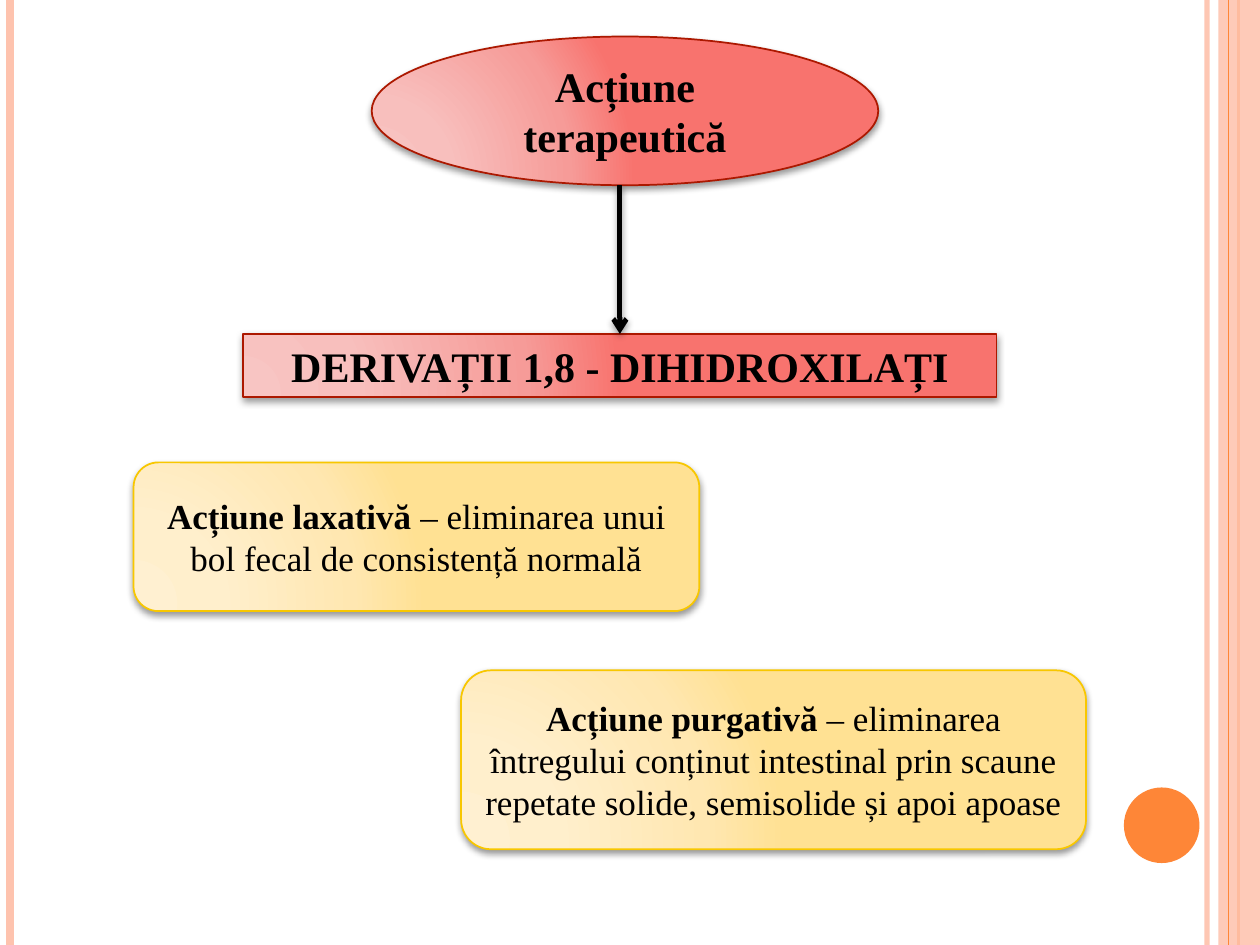
from lxml import etree
from pptx import Presentation
from pptx.dml.color import RGBColor
from pptx.enum.shapes import MSO_CONNECTOR, MSO_SHAPE
from pptx.enum.text import MSO_ANCHOR, MSO_AUTO_SIZE, PP_ALIGN
from pptx.oxml.ns import qn
from pptx.util import Inches, Pt

STRAIGHT = MSO_CONNECTOR.STRAIGHT
RECTANGLE, OVAL = MSO_SHAPE.RECTANGLE, MSO_SHAPE.OVAL
ROUNDED = MSO_SHAPE.ROUNDED_RECTANGLE
TOP, MIDDLE = MSO_ANCHOR.TOP, MSO_ANCHOR.MIDDLE
CENTER = PP_ALIGN.CENTER

WIDTH, HEIGHT = 10, 7.5
FONT = "Times New Roman"
COLORS = {"stripe": "FEC3AE", "accent": "FE8637", "text": "000000",
          "red_line": "AC1800", "yellow_line": "F8C700"}
GRADIENTS = {
    "red": ("F8C5C3", "F8BFBD", "F69B98", "F8736E"),
    "yellow": ("FFF0D1", "FFEFCC", "FFE7B1", "FFE193"),
}
STOPS = (0, 30, 75, 100)
FOCUS = {"l": 5, "t": 100, "r": 120, "b": 10}

LEFT_STRIPES = [(9.58, "stripe", 3, 93), (0.08, "stripe", 4.5, 100), (9.83, "accent", 1.5, 100)]
EDGE_STRIPE = (9.75, "accent", 0.75, 100)
BOXES = [
    (OVAL, (2.95, 0.29, 4.02, 1.18), "red", 24, MIDDLE, [("Acțiune terapeutică", True)]),
    (RECTANGLE, (1.93, 2.65, 5.98, 0.5), "red", 24, TOP,
     [("DERIVAȚII 1,8 - DIHIDROXILAȚI", True)]),
    (ROUNDED, (1.06, 3.67, 4.49, 1.18), "yellow", 20, MIDDLE,
     [("Acțiune laxativă ", True),
      ("– eliminarea unui bol fecal de consistență normală", False)]),
    (ROUNDED, (3.66, 5.32, 4.96, 1.42), "yellow", 20, MIDDLE,
     [("Acțiune purgativă ", True),
      ("– eliminarea întregului conținut intestinal prin scaune repetate solide, "
       "semisolide și apoi apoase", False)]),
]


def color(name):
    return RGBColor.from_string(COLORS[name])


def add_child(parent, tag, **attributes):
    return etree.SubElement(parent, qn(tag), {key: str(value) for key, value in attributes.items()})


def set_alpha(owner, percent):
    if percent < 100:
        add_child(next(owner.iter(qn("a:srgbClr"))), "a:alpha", val=percent * 1000)


def add_shadow(effects, distance, percent):
    shadow = add_child(effects, "a:outerShdw", blurRad=Pt(4), dist=Pt(distance),
                       dir=90 * 60000, rotWithShape=0)
    add_child(shadow, "a:srgbClr", val=COLORS["text"])
    set_alpha(shadow, percent)


def add_line(slide, start, end, color_name, width, opacity=100):
    line = slide.shapes.add_connector(STRAIGHT, *map(Inches, start + end))
    line.line.color.rgb = color(color_name)
    line.line.width = Pt(width)
    set_alpha(line.line._get_or_add_ln(), opacity)
    effects = add_child(line._element.spPr, "a:effectLst")
    return line, effects


def add_stripe(slide, x, color_name, width, opacity):
    add_line(slide, (x, 0), (x, HEIGHT), color_name, width, opacity)


def add_plain(slide, kind, place, color_name, opacity=100):
    shape = slide.shapes.add_shape(kind, *map(Inches, place))
    shape.shadow.inherit = False
    shape.fill.solid()
    shape.fill.fore_color.rgb = color(color_name)
    set_alpha(shape._element.spPr, opacity)
    shape.line.fill.background()


def set_gradient(shape, hex_colors):
    shape.fill.gradient()
    gradient = shape._element.spPr.find(qn("a:gradFill"))
    for child in list(gradient):
        gradient.remove(child)
    stops = add_child(gradient, "a:gsLst")
    for position, hex_color in zip(STOPS, hex_colors):
        stop = add_child(stops, "a:gs", pos=position * 1000)
        add_child(stop, "a:srgbClr", val=hex_color)
    circle = add_child(gradient, "a:path", path="circle")
    add_child(circle, "a:fillToRect", **{side: value * 1000 for side, value in FOCUS.items()})


def add_box(slide, kind, place, palette, size, anchor, runs):
    shape = slide.shapes.add_shape(kind, *map(Inches, place))
    set_gradient(shape, GRADIENTS[palette])
    shape.line.color.rgb = color(palette + "_line")
    shape.line.width = Pt(1)
    shape.shadow.inherit = False
    add_shadow(shape._element.spPr.find(qn("a:effectLst")), 2, 40)
    frame = shape.text_frame
    frame.word_wrap = True
    frame.vertical_anchor = anchor
    if anchor == TOP:
        frame.auto_size = MSO_AUTO_SIZE.SHAPE_TO_FIT_TEXT
    paragraph = frame.paragraphs[0]
    paragraph.alignment = CENTER
    paragraph.font.name = FONT
    paragraph.font.size = Pt(size)
    paragraph.font.color.rgb = color("text")
    for text, bold in runs:
        run = paragraph.add_run()
        run.text = text
        run.font.bold = bold
    return shape


def main():
    presentation = Presentation()
    presentation.slide_width, presentation.slide_height = Inches(WIDTH), Inches(HEIGHT)
    slide = presentation.slides.add_slide(presentation.slide_layouts[6])

    for stripe in LEFT_STRIPES:
        add_stripe(slide, *stripe)
    add_plain(slide, RECTANGLE, (9.67, 0, 0.33, HEIGHT), "stripe", 87)
    add_stripe(slide, *EDGE_STRIPE)
    add_plain(slide, OVAL, (8.92, 6.25, 0.6, 0.6), "accent")

    boxes = [add_box(slide, *box) for box in BOXES]
    arrow, effects = add_line(slide, (4.92, 1.47), (4.92, 2.65), "text", 2.75)
    arrow.end_connect(boxes[1], 0)
    add_child(arrow.line._get_or_add_ln(), "a:tailEnd", type="arrow")
    add_shadow(effects, 1.6, 42)

    presentation.save("out.pptx")


if __name__ == "__main__":
    main()
